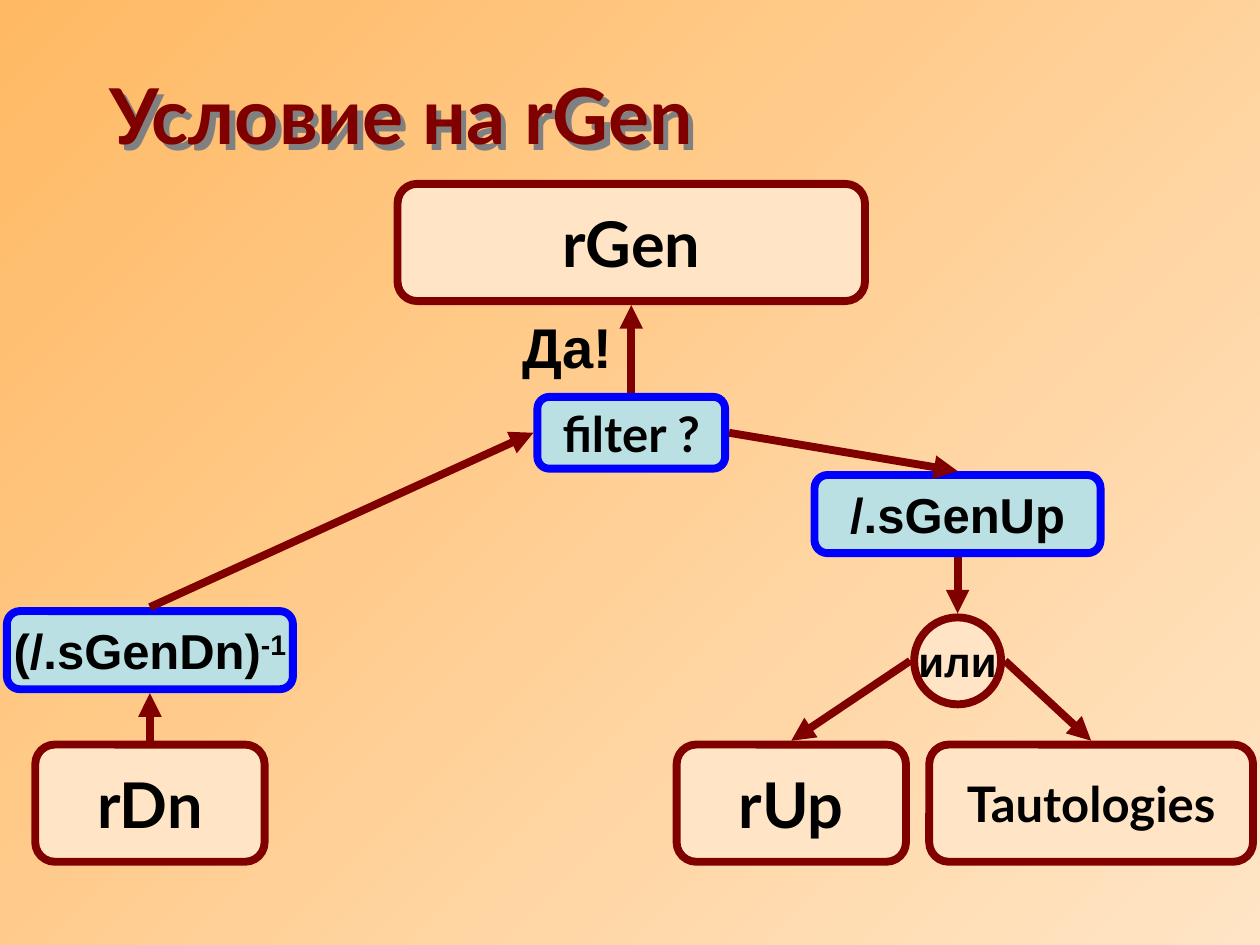
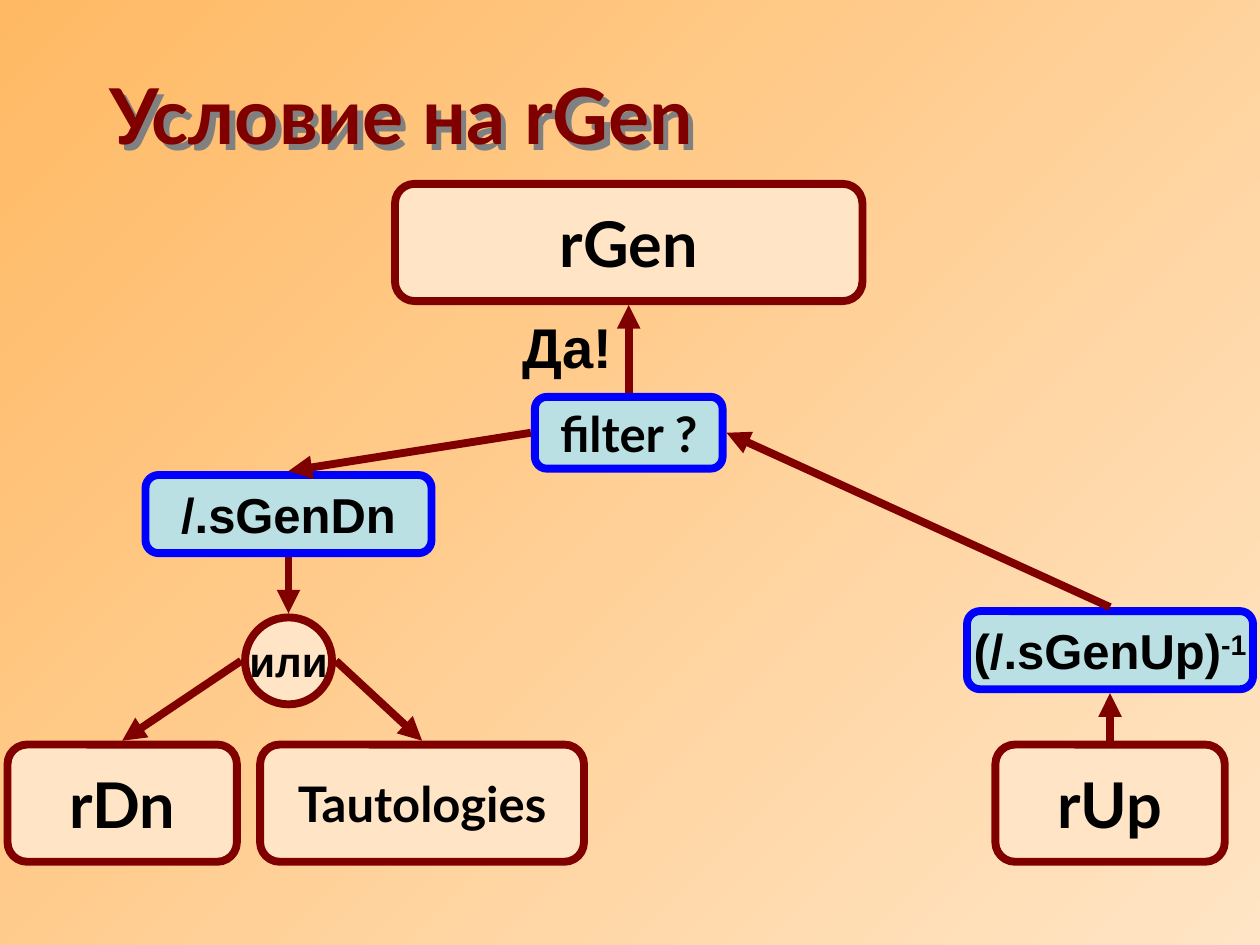
from lxml import etree
from pptx import Presentation
from pptx.dml.color import RGBColor
from pptx.enum import shapes, text
from pptx.oxml import ns
from pptx.util import Inches, Pt

MAROON = RGBColor(0x80, 0x00, 0x00)
BLUE = RGBColor(0x00, 0x00, 0xFF)
PEACH = RGBColor(0xFF, 0xE5, 0xC5)
ORANGE = RGBColor(0xFF, 0xB9, 0x64)
AQUA = RGBColor(0xBB, 0xE0, 0xE3)
BLACK = RGBColor(0x00, 0x00, 0x00)
GREY = RGBColor(0x80, 0x80, 0x80)

STROKE = Pt(4.5)
EDGE = STROKE // 2  # arrows meet the outer edge of a border
TOP, LEFT, BOTTOM, RIGHT = range(4)
SIDES = {TOP: (0.5, 0, 0, -1), LEFT: (0, 0.5, -1, 0),
         BOTTOM: (0.5, 1, 0, 1), RIGHT: (1, 0.5, 1, 0)}
ROUND = shapes.MSO_SHAPE.ROUNDED_RECTANGLE
OVAL = shapes.MSO_SHAPE.OVAL

# Vertical rows shared by both slides: top, height
RESULT_ROW = (1.46, 0.93)
FILTER_ROW = (3.15, 0.57)
UPPER_ROW = (3.77, 0.62)
LOWER_ROW = (4.85, 0.62)
OR_ROW = (4.9, 0.69)
SOURCE_ROW = (5.91, 0.93)


def add_effects(properties):
    return etree.SubElement(properties, ns.qn("a:effectLst"))


def style_runs(para, size, font, color=BLACK):
    for span in para.runs:
        span.font.size = Pt(size)
        span.font.name = font
        span.font.bold = True
        span.font.color.rgb = color


def set_background(master):
    fill = master.background.fill
    fill.gradient()
    fill.gradient_angle = 315
    for stop, color, position in zip(fill.gradient_stops, (ORANGE, PEACH), (0, 1)):
        stop.color.rgb = color
        stop.position = position


def add_title(page, words):
    title = page.shapes.title
    title.left, title.top = Inches(0.77), Inches(0.28)
    title.width, title.height = Inches(9.12), Inches(1.25)
    frame = title.text_frame
    frame.text = words
    frame.vertical_anchor = text.MSO_ANCHOR.MIDDLE
    para = frame.paragraphs[0]
    para.alignment = text.PP_ALIGN.LEFT
    style_runs(para, 44, "Lato", MAROON)
    shadow = etree.SubElement(add_effects(title._element.spPr), ns.qn("a:outerShdw"),
                              dist=str(Pt(4.24)), dir="2700000", algn="ctr", rotWithShape="0")
    etree.SubElement(shadow, ns.qn("a:srgbClr"), val=str(GREY))


def add_node(page, words, center, row, width, size, font="Lato",
             kind=ROUND, fill=PEACH, line=MAROON, power=None):
    top, height = row
    box = page.shapes.add_shape(kind, Inches(center - width / 2), Inches(top),
                                Inches(width), Inches(height))
    box.shadow.inherit = False
    box.fill.solid()
    box.fill.fore_color.rgb = fill
    box.line.color.rgb = line
    box.line.width = STROKE
    frame = box.text_frame
    frame.word_wrap = False
    frame.vertical_anchor = text.MSO_ANCHOR.MIDDLE
    frame.text = words
    para = frame.paragraphs[0]
    para.alignment = text.PP_ALIGN.CENTER
    if power:
        para.add_run().text = power
    style_runs(para, size, font)
    if power:
        para.runs[-1].font._element.set("baseline", "30000")
    return box


def add_operation(page, words, center, row, width=2.27, font="Arial", power=None):
    return add_node(page, words, center, row, width, 28, font,
                    fill=AQUA, line=BLUE, power=power)


def side_point(box, side):
    across, down, out_x, out_y = SIDES[side]
    return (int(box.left + across * box.width + out_x * EDGE),
            int(box.top + down * box.height + out_y * EDGE))


def add_arrow(page, source, source_side, target, target_side):
    start, end = side_point(source, source_side), side_point(target, target_side)
    arrow = page.shapes.add_connector(shapes.MSO_CONNECTOR.STRAIGHT, *start, *end)
    # An oval's side sites are numbered differently, so those ends stay free
    if source.auto_shape_type == ROUND:
        arrow.begin_connect(source, source_side)
    if target.auto_shape_type == ROUND:
        arrow.end_connect(target, target_side)
    arrow.begin_x, arrow.begin_y = start
    arrow.end_x, arrow.end_y = end
    arrow.line.color.rgb = MAROON
    arrow.line.width = STROKE
    etree.SubElement(arrow.line._get_or_add_ln(), ns.qn("a:tailEnd"), type="triangle")
    add_effects(arrow._element.spPr)


def add_result(page, center):
    """Filter leading up to the generated result."""
    result = add_node(page, "rGen", center, RESULT_ROW, 3.71, 36)
    check = add_operation(page, "filter ?", center, FILTER_ROW, 1.49, "Lato")
    add_arrow(page, check, TOP, result, BOTTOM)
    label = page.shapes.add_textbox(Inches(4.05), Inches(2.43), Inches(0.91), Inches(0.63))
    frame = label.text_frame
    frame.word_wrap = False
    frame.text = "Да!"
    style_runs(frame.paragraphs[0], 32, "Arial")
    return check


def add_inverse_chain(page, center, suffix, check, check_side):
    """Source relation passing through the inverse operation to the filter."""
    source = add_node(page, f"r{suffix}", center, SOURCE_ROW, 1.82, 36)
    inverse = add_operation(page, f"(/.sGen{suffix})", center, LOWER_ROW, power="-1")
    add_arrow(page, source, TOP, inverse, BOTTOM)
    add_arrow(page, inverse, TOP, check, check_side)


def add_choice_tree(page, left, suffix, check, check_side):
    """Operation that splits into a relation or tautologies."""
    middle = left + 2.23
    operation = add_operation(page, f"/.sGen{suffix}", middle, UPPER_ROW)
    choice = add_node(page, "или", middle, OR_ROW, 0.69, 24, "Arial", OVAL)
    relation = add_node(page, f"r{suffix}", left + 0.91, SOURCE_ROW, 1.82, 36)
    tautologies = add_node(page, "Tautologies", left + 3.29, SOURCE_ROW, 2.57, 28)
    add_arrow(page, operation, BOTTOM, choice, TOP)
    add_arrow(page, choice, LEFT, relation, TOP)
    add_arrow(page, choice, RIGHT, tautologies, TOP)
    add_arrow(page, check, check_side, operation, TOP)


def add_condition_slide(deck, hub, chain, tree):
    page = deck.slides.add_slide(deck.slide_layouts[5])
    add_title(page, "Условие на rGen")
    check = add_result(page, hub)
    add_inverse_chain(page, *chain, check, LEFT if chain[0] < hub else RIGHT)
    add_choice_tree(page, *tree, check, LEFT if tree[0] < chain[0] else RIGHT)


def main():
    deck = Presentation()
    deck.slide_width, deck.slide_height = Inches(10), Inches(7.5)
    set_background(deck.slide_master)
    add_condition_slide(deck, hub=5.01, chain=(1.19, "Dn"), tree=(5.37, "Up"))
    add_condition_slide(deck, hub=4.99, chain=(8.81, "Up"), tree=(0.06, "Dn"))
    deck.save("out.pptx")


if __name__ == "__main__":
    main()
